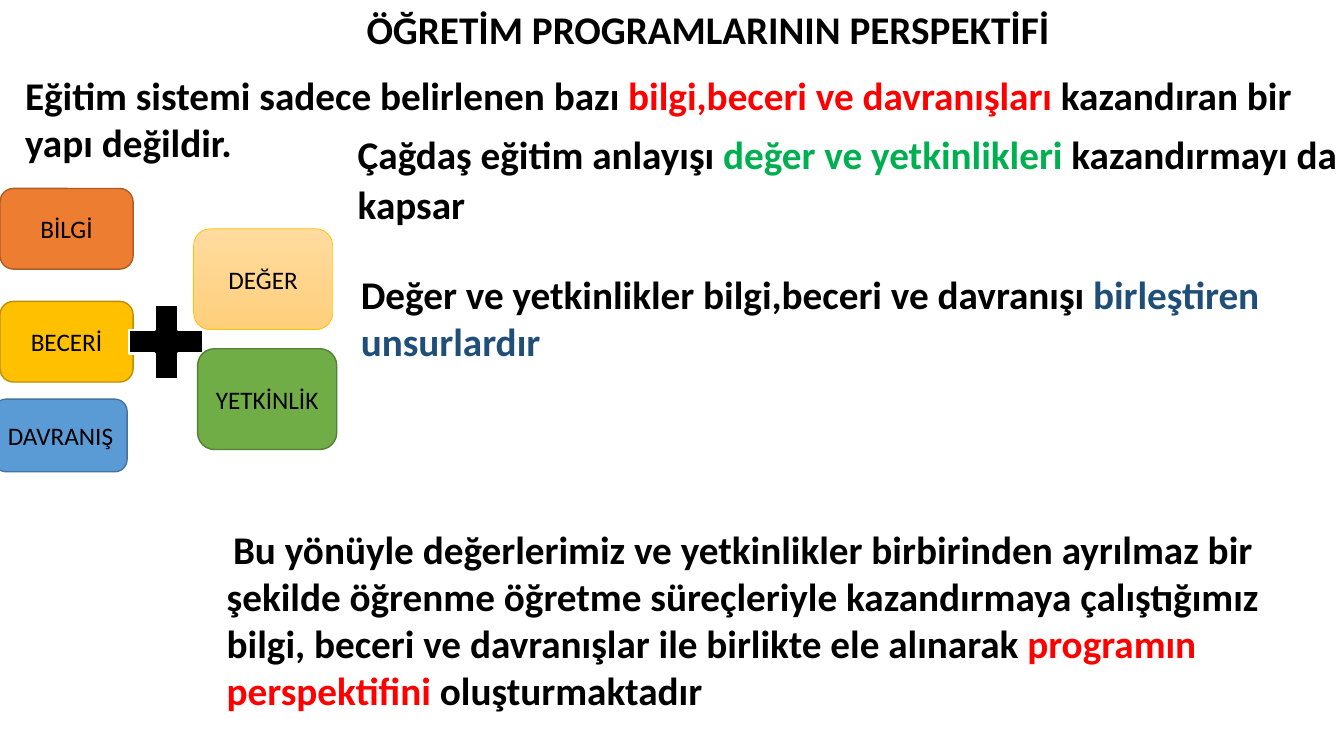
import dataclasses

import pptx
import pptx.dml.color
import pptx.enum.shapes
import pptx.enum.text
import pptx.util

Inches = pptx.util.Inches
Pt = pptx.util.Pt
Shapes = pptx.enum.shapes.MSO_SHAPE


@dataclasses.dataclass(frozen=True)
class Theme:
    font: str = "Calibri"
    body: int = 28
    label: int = 18
    title_lead: int = 18
    closing_lead: int = 20
    black: str = "000000"
    white: str = "FFFFFF"
    red: str = "FF0000"
    green: str = "00B050"
    navy: str = "1F4E79"
    knowledge: tuple = ("ED7D31", "AF5C24")
    skill: tuple = ("FFC000", "BD8E00")
    behaviour: tuple = ("5B9BD5", "43739E")
    value: tuple = (("FFDB9E", "FFD07C"), "FFC000")
    competence: tuple = ("70AD47", "538035")


THEME = Theme()


def rgb(color):
    return pptx.dml.color.RGBColor.from_string(color)


def apply(target, values):
    for name, value in values.items():
        setattr(target, name, value)


def add_span(para, text, color=THEME.black, size=THEME.body, bold=True):
    span = para.add_run()
    span.text = text
    apply(span.font, {"name": THEME.font, "size": Pt(size), "bold": bold})
    span.font.color.rgb = rgb(color)


def add_statement(page, place, spans, spacing=None):
    box = page.shapes.add_textbox(*map(Inches, place))
    box.text_frame.word_wrap = True
    para = box.text_frame.paragraphs[0]
    apply(para, spacing or {})
    for span in spans:
        add_span(para, *span)


def paint(shape, fill, line, width):
    shape.shadow.inherit = False
    if isinstance(fill, tuple):
        shape.fill.gradient()
        shape.fill.gradient_angle = 270
        for stop, color in zip(shape.fill.gradient_stops, fill):
            stop.color.rgb = rgb(color)
    else:
        shape.fill.solid()
        shape.fill.fore_color.rgb = rgb(fill)
    shape.line.color.rgb = rgb(line)
    shape.line.width = Pt(width)


def add_card(page, label, place, colors, width=1):
    card = page.shapes.add_shape(Shapes.ROUNDED_RECTANGLE, *map(Inches, place))
    paint(card, *colors, width)
    apply(card.text_frame, {
        "word_wrap": True,
        "vertical_anchor": pptx.enum.text.MSO_ANCHOR.MIDDLE,
    })
    para = card.text_frame.paragraphs[0]
    para.alignment = pptx.enum.text.PP_ALIGN.CENTER
    add_span(para, label, size=THEME.label, bold=False)


def add_plus(page, place):
    plus = page.shapes.add_shape(Shapes.MATH_PLUS, *map(Inches, place))
    paint(plus, THEME.black, THEME.white, 1.5)


def main():
    deck = pptx.Presentation()
    apply(deck, {"slide_width": Inches(13.33), "slide_height": Inches(7.5)})
    page = deck.slides.add_slide(deck.slide_layouts[6])

    add_statement(page, (3.48, 0, 7.95, 0.57), [
        (" ", THEME.black, THEME.title_lead),
        ("ÖĞRETİM PROGRAMLARININ PERSPEKTİFİ",),
    ])
    add_statement(page, (0.15, 0.66, 13.33, 2.09), [
        ("Eğitim sistemi sadece belirlenen bazı ",),
        ("bilgi,beceri ve davranışları ", THEME.red),
        ("kazandıran bir yapı değildir.",),
    ])
    add_statement(page, (3.45, 1.21, 10.1, 1.11), [
        ("Çağdaş eğitim anlayışı ",),
        ("değer ve yetkinlikleri ", THEME.green),
        ("kazandırmayı da kapsar",),
    ], {"line_spacing": 1.07, "space_after": Pt(8)})
    add_statement(page, (3.48, 2.63, 9.82, 1.04), [
        ("Değer ve yetkinlikler bilgi,beceri ve davranışı ",),
        ("birleştiren unsurlardır", THEME.navy),
    ])
    add_statement(page, (2.15, 5.16, 11.15, 1.99), [
        (" ", THEME.black, THEME.closing_lead, False),
        ("Bu yönüyle değerlerimiz ve yetkinlikler birbirinden ayrılmaz bir "
         "şekilde öğrenme öğretme süreçleriyle kazandırmaya çalıştığımız "
         "bilgi, beceri ve davranışlar ile birlikte ele alınarak ",),
        ("programın perspektifini ", THEME.red),
        ("oluşturmaktadır",),
    ])

    add_card(page, "BİLGİ", (0, 1.87, 1.32, 0.8), THEME.knowledge)
    add_card(page, "BECERİ", (0, 2.99, 1.32, 0.8), THEME.skill)
    add_card(page, "DAVRANIŞ", (-0.06, 3.96, 1.32, 0.72), THEME.behaviour)
    add_card(page, "DEĞER", (1.92, 2.27, 1.38, 1), THEME.value, 0.5)
    add_plus(page, (1.15, 2.89, 1, 1))
    add_card(page, "YETKİNLİK", (1.96, 3.46, 1.38, 1), THEME.competence)

    deck.save("out.pptx")


if __name__ == "__main__":
    main()
